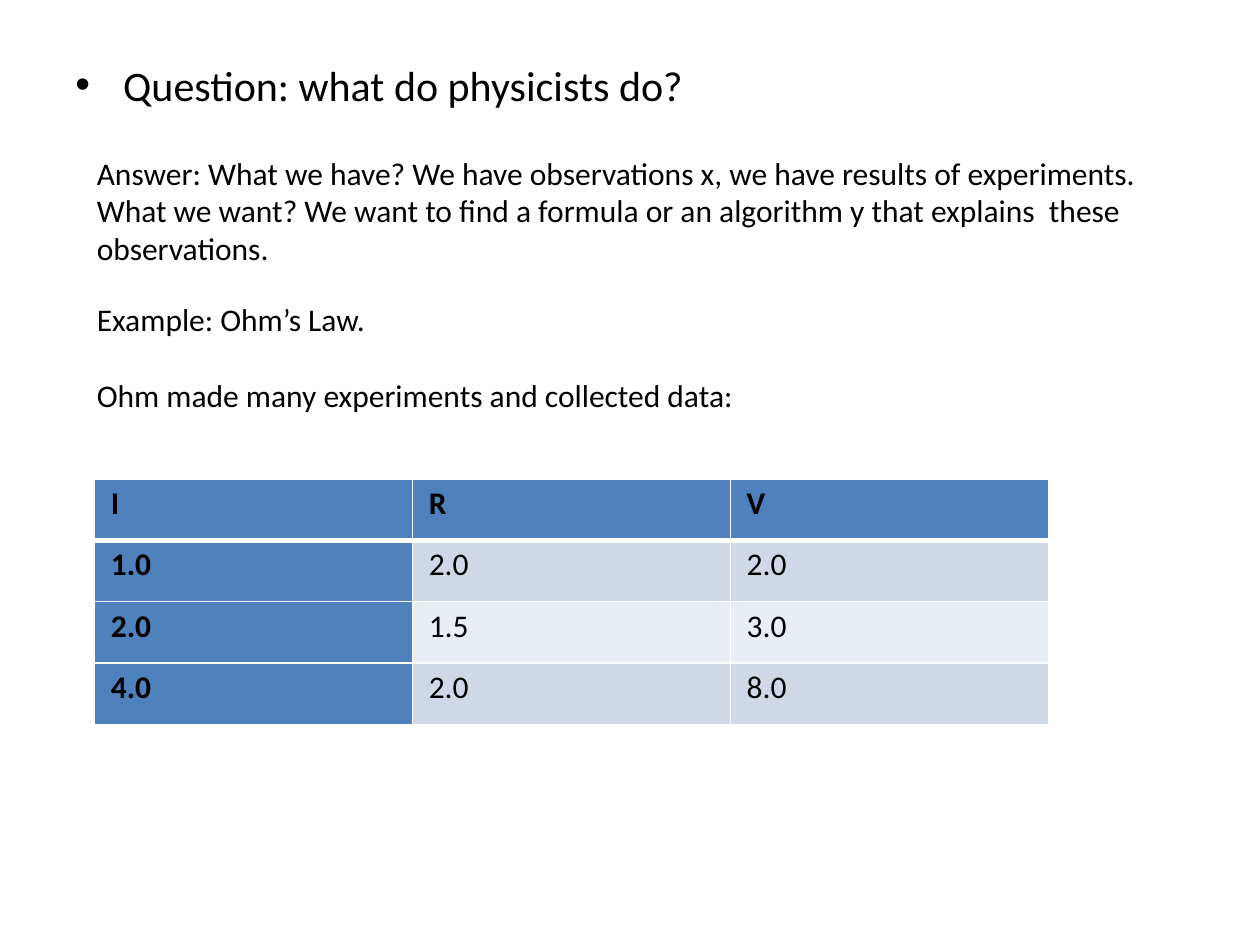
from lxml.etree import SubElement
from pptx import Presentation
from pptx.dml.color import RGBColor
from pptx.enum.text import MSO_AUTO_SIZE
from pptx.oxml import parse_xml
from pptx.oxml.ns import nsdecls, qn
from pptx.util import Inches, Pt

BLACK, WHITE, BLUE = "000000", "FFFFFF", "4F81BD"
BANDS = ("D0D8E8", "E9EDF4")
READINGS = [
    ("I", "R", "V"),
    ("1.0", "2.0", "2.0"),
    ("2.0", "1.5", "3.0"),
    ("4.0", "2.0", "8.0"),
]


def color(value):
    """Turn a hex string into a colour."""
    return RGBColor.from_string(value)


def set_font(paragraph, size, bold=False):
    """Give a paragraph the slide's typeface."""
    font = paragraph.font
    font.name, font.size, font.bold = "Calibri", Pt(size), bold
    font.color.rgb = color(BLACK)


def add_text(slide, box, lines, size=18, wrap=False, gap=0):
    """Place one paragraph per line, with a gap in points before each later one."""
    shape = slide.shapes.add_textbox(*map(Inches, box))
    frame = shape.text_frame
    frame.word_wrap = wrap
    frame.auto_size = MSO_AUTO_SIZE.NONE if wrap else MSO_AUTO_SIZE.SHAPE_TO_FIT_TEXT
    for index, line in enumerate(lines):
        paragraph = frame.add_paragraph() if index else frame.paragraphs[0]
        paragraph.text = line
        set_font(paragraph, size)
        if index:
            paragraph.space_before = Pt(gap)
    return frame


def add_question(slide, box, text):
    """Place the bulleted question in its box."""
    paragraph = add_text(slide, box, [text], 24, wrap=True).paragraphs[0]
    paragraph.space_before = Pt(4.8)
    properties = paragraph._p.get_or_add_pPr()
    properties.set("marL", str(Inches(0.38)))
    properties.set("indent", str(-Inches(0.38)))
    SubElement(properties, qn("a:buFont")).set("typeface", "Arial")
    SubElement(properties, qn("a:buChar")).set("char", "•")


def set_borders(cell, top, bottom):
    """Draw white cell borders with the given top and bottom widths in points."""
    widths = {"lnL": 1, "lnR": 1, "lnT": top, "lnB": bottom}
    for index, (side, width) in enumerate(widths.items()):
        border = parse_xml(
            f'<a:{side} {nsdecls("a")} w="{Pt(width)}"><a:solidFill>'
            f'<a:srgbClr val="{WHITE}"/></a:solidFill></a:{side}>'
        )
        cell._tc.get_or_add_tcPr().insert(index, border)


def add_readings(slide, box, rows):
    """Fill the box with a table that has a header row and a header column."""
    shape = slide.shapes.add_table(len(rows), len(rows[0]), *map(Inches, box))
    for row, values in enumerate(rows):
        for column, value in enumerate(values):
            cell = shape.table.cell(row, column)
            heading = row == 0 or column == 0
            cell.text = value
            cell.margin_left, cell.margin_right = Inches(0.13), Inches(0.07)
            cell.margin_top = cell.margin_bottom = 0
            cell.fill.solid()
            cell.fill.fore_color.rgb = color(BLUE if heading else BANDS[(row - 1) % 2])
            set_borders(cell, 3 if row == 1 else 1, 3 if row == 0 else 1)
            paragraph = cell.text_frame.paragraphs[0]
            paragraph.line_spacing = 1.15
            set_font(paragraph, 18, heading)


def main():
    """Build and save the slide."""
    presentation = Presentation()
    presentation.slide_width, presentation.slide_height = Inches(10), Inches(7.5)
    slide = presentation.slides.add_slide(presentation.slide_layouts[6])
    add_question(slide, (0.5, 0.42, 9, 0.58), "Question: what do physicists do?")
    add_text(slide, (0.67, 1.17, 8.54, 1.01), [
        "Answer: What we have? We have observations x, we have results of experiments.",
        "What we want? We want to find a formula or an algorithm y that explains  these",
        "observations.",
    ])
    add_text(slide, (0.67, 2.33, 5.31, 1.01), [
        "Example: Ohm’s Law.",
        "Ohm made many experiments and collected data:",
    ], gap=22)
    add_readings(slide, (0.75, 3.8, 7.57, 1.95), READINGS)
    presentation.save("out.pptx")


if __name__ == "__main__":
    main()
